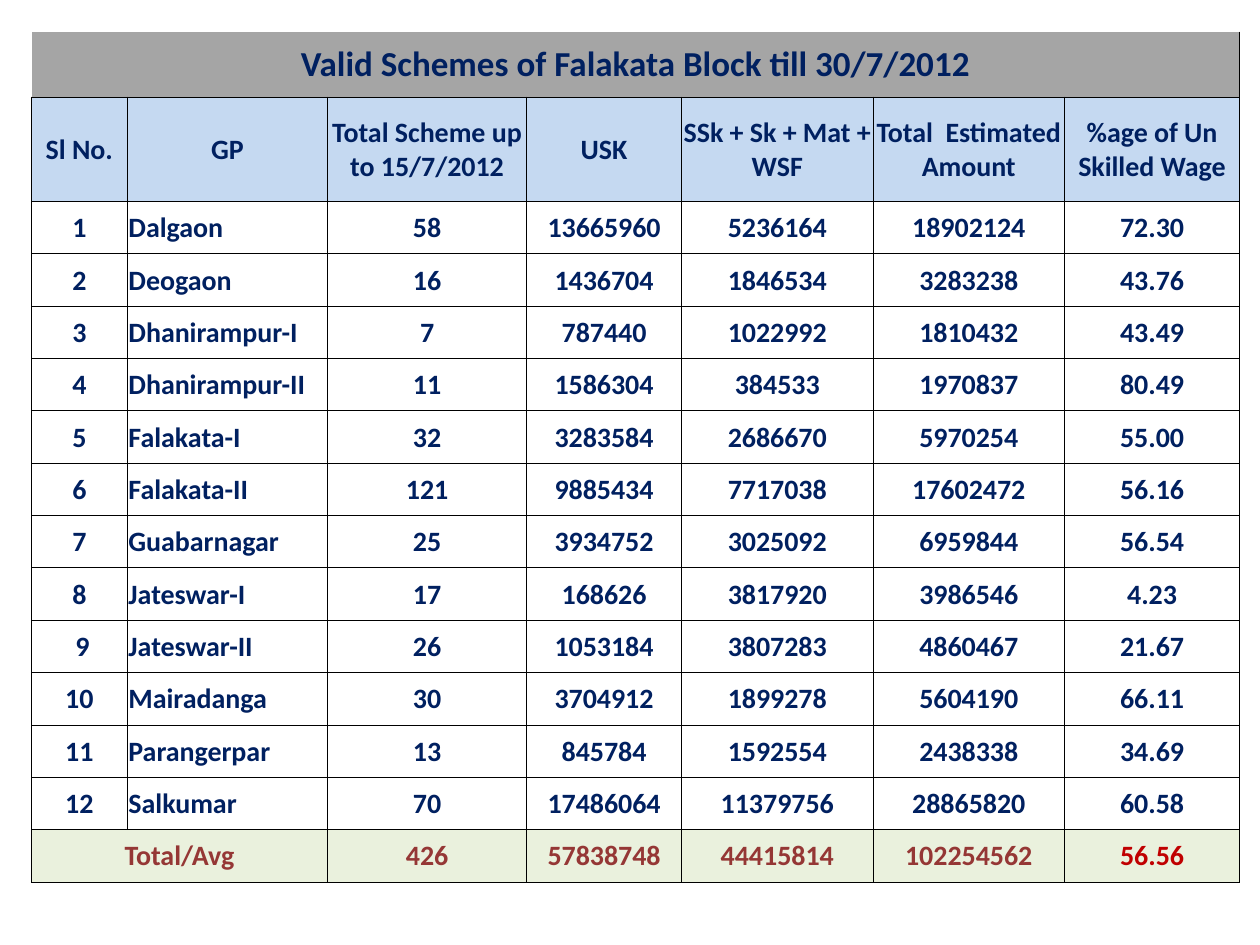
from lxml.etree import SubElement
from pptx import Presentation
from pptx.dml.color import RGBColor
from pptx.enum.text import MSO_ANCHOR as Anchor, PP_ALIGN as Align
from pptx.oxml.ns import qn
from pptx.util import Inches, Pt

NAVY, MAROON, RED = "002060", "953735", "C00000"
GREY, PALE_BLUE, PALE_GREEN = "A5A5A5", "C5D9F1", "EAF1DD"
TABLE_HEIGHT = 6.75
COLUMN_WIDTHS = [0.76, 1.59, 1.58, 1.23, 1.52, 1.52, 1.39]
TITLE_HEIGHT, HEADER_HEIGHT = 0.52, 0.83

rows = [
    ["Valid Schemes of Falakata Block till 30/7/2012"] + [""] * 6,
    ["Sl No.", "GP", "Total Scheme up to 15/7/2012", "USK", "SSk + Sk + Mat + WSF",
     "Total  Estimated Amount", "%age of Un Skilled Wage"],
    ["1", "Dalgaon", "58", "13665960", "5236164", "18902124", "72.30"],
    ["2", "Deogaon", "16", "1436704", "1846534", "3283238", "43.76"],
    ["3", "Dhanirampur-I", "7", "787440", "1022992", "1810432", "43.49"],
    ["4", "Dhanirampur-II", "11", "1586304", "384533", "1970837", "80.49"],
    ["5", "Falakata-I", "32", "3283584", "2686670", "5970254", "55.00"],
    ["6", "Falakata-II", "121", "9885434", "7717038", "17602472", "56.16"],
    ["7", "Guabarnagar", "25", "3934752", "3025092", "6959844", "56.54"],
    ["8", "Jateswar-I", "17", "168626", "3817920", "3986546", "4.23"],
    [" 9", "Jateswar-II", "26", "1053184", "3807283", "4860467", "21.67"],
    ["10", "Mairadanga", "30", "3704912", "1899278", "5604190", "66.11"],
    ["11", "Parangerpar", "13", "845784", "1592554", "2438338", "34.69"],
    ["12", "Salkumar", "70", "17486064", "11379756", "28865820", "60.58"],
    ["Total/Avg", "", "426", "57838748", "44415814", "102254562", "56.56"],
]
last_row, last_column = len(rows) - 1, len(COLUMN_WIDTHS) - 1
row_fills = {0: GREY, 1: PALE_BLUE, last_row: PALE_GREEN}
cell_format = {"margin_left": Inches(0.01), "margin_right": Inches(0.01),
               "margin_top": Inches(0.01), "margin_bottom": 0,
               "vertical_anchor": Anchor.MIDDLE}


def color(hex_value):
    return RGBColor.from_string(hex_value)


def set_borders(cell, visible_sides):
    """Draw thin black lines on the given sides and clear the other ones."""
    properties = cell._tc.get_or_add_tcPr()
    for side in "LRTB":
        line = SubElement(properties, qn(f"a:ln{side}"), w=str(Pt(0.5)))
        if side in visible_sides:
            fill = SubElement(line, qn("a:solidFill"))
            SubElement(fill, qn("a:srgbClr"), val="000000")
        else:
            SubElement(line, qn("a:noFill"))


presentation = Presentation()
presentation.slide_width, presentation.slide_height = Inches(10), Inches(7.5)
slide = presentation.slides.add_slide(presentation.slide_layouts[6])

table = slide.shapes.add_table(
    len(rows), len(COLUMN_WIDTHS), Inches(0.25), Inches(0.25),
    Inches(sum(COLUMN_WIDTHS)), Inches(TABLE_HEIGHT)).table
table.first_row = table.horz_banding = False

for column, width in zip(table.columns, COLUMN_WIDTHS):
    column.width = Inches(width)
body_height = (TABLE_HEIGHT - TITLE_HEIGHT - HEADER_HEIGHT) / (len(rows) - 2)
row_heights = [TITLE_HEIGHT, HEADER_HEIGHT] + [body_height] * (len(rows) - 2)
for row, height in zip(table.rows, row_heights):
    row.height = Inches(height)

table.cell(0, 0).merge(table.cell(0, last_column))
table.cell(last_row, 0).merge(table.cell(last_row, 1))

for row_index, texts in enumerate(rows):
    for column_index, text in enumerate(texts):
        cell = table.cell(row_index, column_index)
        for name, value in cell_format.items():
            setattr(cell, name, value)
        set_borders(cell, "RB" if row_index == 0 else "LRTB")
        if row_index in row_fills:
            cell.fill.solid()
            cell.fill.fore_color.rgb = color(row_fills[row_index])
        else:
            cell.fill.background()
        if cell.is_spanned:
            continue

        paragraph = cell.text_frame.paragraphs[0]
        is_place_name = column_index == 1 and row_index > 1
        paragraph.alignment = Align.LEFT if is_place_name else Align.CENTER
        run = paragraph.add_run()
        run.text = text
        font_color = NAVY
        if row_index == last_row:
            font_color = RED if column_index == last_column else MAROON
        font_format = {"name": "Calibri", "bold": True,
                       "size": Pt(20 if row_index == 0 else 16)}
        for name, value in font_format.items():
            setattr(run.font, name, value)
        run.font.color.rgb = color(font_color)

presentation.save("out.pptx")
